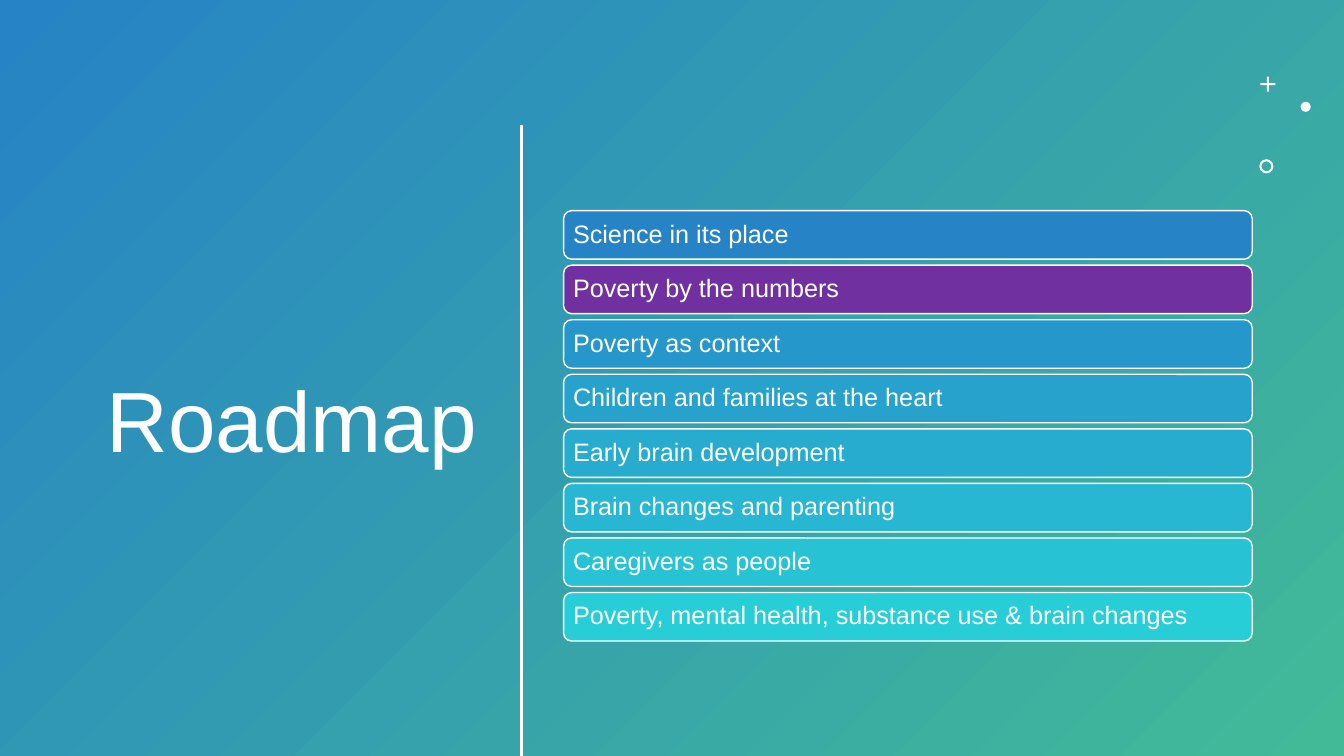
from lxml.etree import SubElement
from pptx import Presentation
from pptx.dml.color import RGBColor
from pptx.enum.shapes import MSO_CONNECTOR as Connector, MSO_SHAPE as Shape
from pptx.enum.text import MSO_ANCHOR as Anchor, MSO_AUTO_SIZE as AutoSize, PP_ALIGN as Align
from pptx.oxml.ns import qn
from pptx.util import Inches, Pt

WIDTH, HEIGHT = 13.33, 7.5
FONT = "Arial"
COLORS = {
    "white": "FFFFFF", "blue": "2683C6", "green": "42BA97", "purple": "7030A0",
    "step3": "2697CB", "step4": "26A2CD", "step5": "27ACD0",
    "step6": "27B7D2", "step7": "27C3D5", "step8": "27CED7",
}
TOPICS = [
    ("Science in its place", "blue"),
    ("Poverty by the numbers", "purple"),
    ("Poverty as context", "step3"),
    ("Children and families at the heart", "step4"),
    ("Early brain development", "step5"),
    ("Brain changes and parenting", "step6"),
    ("Caregivers as people", "step7"),
    ("Poverty, mental health, substance use & brain changes", "step8"),
]
LIST_LEFT, LIST_TOP, LIST_WIDTH, LIST_HEIGHT = 5.59, 2.09, 6.83, 4.27
BAR_GAP = 0.06
BAR_HEIGHT = (LIST_HEIGHT - BAR_GAP * (len(TOPICS) - 1)) / len(TOPICS)
ORNAMENTS = [
    (Shape.CROSS, 12.5, 0.76, 0.15, 0.43),
    (Shape.OVAL, 12.9, 1.01, 0.1, None),
    (Shape.DONUT, 12.49, 1.58, 0.14, 0.15),
]


def color(name):
    """Return the named colour."""
    return RGBColor.from_string(COLORS[name])


def set_background(slide):
    """Fill the slide with a diagonal gradient."""
    fill = slide.background.fill
    fill.gradient()
    fill.gradient_angle = 315
    for stop, name in zip(fill.gradient_stops, ("blue", "green")):
        stop.color.rgb = color(name)


def write(frame, text, size, align):
    """Write one vertically centred white line."""
    frame.word_wrap = True
    frame.auto_size = AutoSize.NONE
    frame.vertical_anchor = Anchor.MIDDLE
    paragraph = frame.paragraphs[0]
    paragraph.alignment = align
    paragraph.line_spacing = 0.9
    run = paragraph.add_run()
    run.text = text
    run.font.name = FONT
    run.font.size = Pt(size)
    run.font.color.rgb = color("white")


def place_title(slide, text):
    """Move and format the title placeholder."""
    title = slide.shapes.title
    title.left, title.top = Inches(0.52), Inches(1.16)
    title.width, title.height = Inches(4.31), Inches(6.11)
    write(title.text_frame, text, 61, Align.RIGHT)


def add_filled(slide, kind, left, top, width, height, fill):
    """Add a flat preset shape without an outline."""
    shape = slide.shapes.add_shape(
        kind, Inches(left), Inches(top), Inches(width), Inches(height))
    shape.shadow.inherit = False
    shape.fill.solid()
    shape.fill.fore_color.rgb = color(fill)
    shape.line.fill.background()
    return shape


def add_ornament(slide, kind, left, top, size, adjustment):
    """Add a small white decoration."""
    shape = add_filled(slide, kind, left, top, size, size, "white")
    if adjustment is not None:
        shape.adjustments[0] = adjustment


def add_divider(slide, left, top):
    """Add a white vertical line down to the slide's edge."""
    line = slide.shapes.add_connector(
        Connector.STRAIGHT, Inches(left), Inches(top), Inches(left), Inches(HEIGHT))
    line.line.color.rgb = color("white")
    line.line.width = Pt(2)
    SubElement(line._element.spPr, qn("a:effectLst"))


def add_topic(slide, row, text, fill):
    """Add one roadmap bar in its row of the list."""
    top = LIST_TOP + row * (BAR_HEIGHT + BAR_GAP)
    bar = add_filled(
        slide, Shape.ROUNDED_RECTANGLE, LIST_LEFT, top, LIST_WIDTH, BAR_HEIGHT, fill)
    bar.line.color.rgb = color("white")
    bar.line.width = Pt(1)
    frame = bar.text_frame
    frame.margin_left = frame.margin_right = Inches(0.07)
    frame.margin_top = frame.margin_bottom = Inches(0.07)
    write(frame, text, 18, Align.LEFT)


def main():
    """Build the roadmap slide."""
    presentation = Presentation()
    presentation.slide_width, presentation.slide_height = Inches(WIDTH), Inches(HEIGHT)
    slide = presentation.slides.add_slide(presentation.slide_layouts[5])
    set_background(slide)
    place_title(slide, "Roadmap")
    for ornament in ORNAMENTS:
        add_ornament(slide, *ornament)
    add_divider(slide, 5.17, 1.24)
    for row, (text, fill) in enumerate(TOPICS):
        add_topic(slide, row, text, fill)
    presentation.save("out.pptx")


if __name__ == "__main__":
    main()
